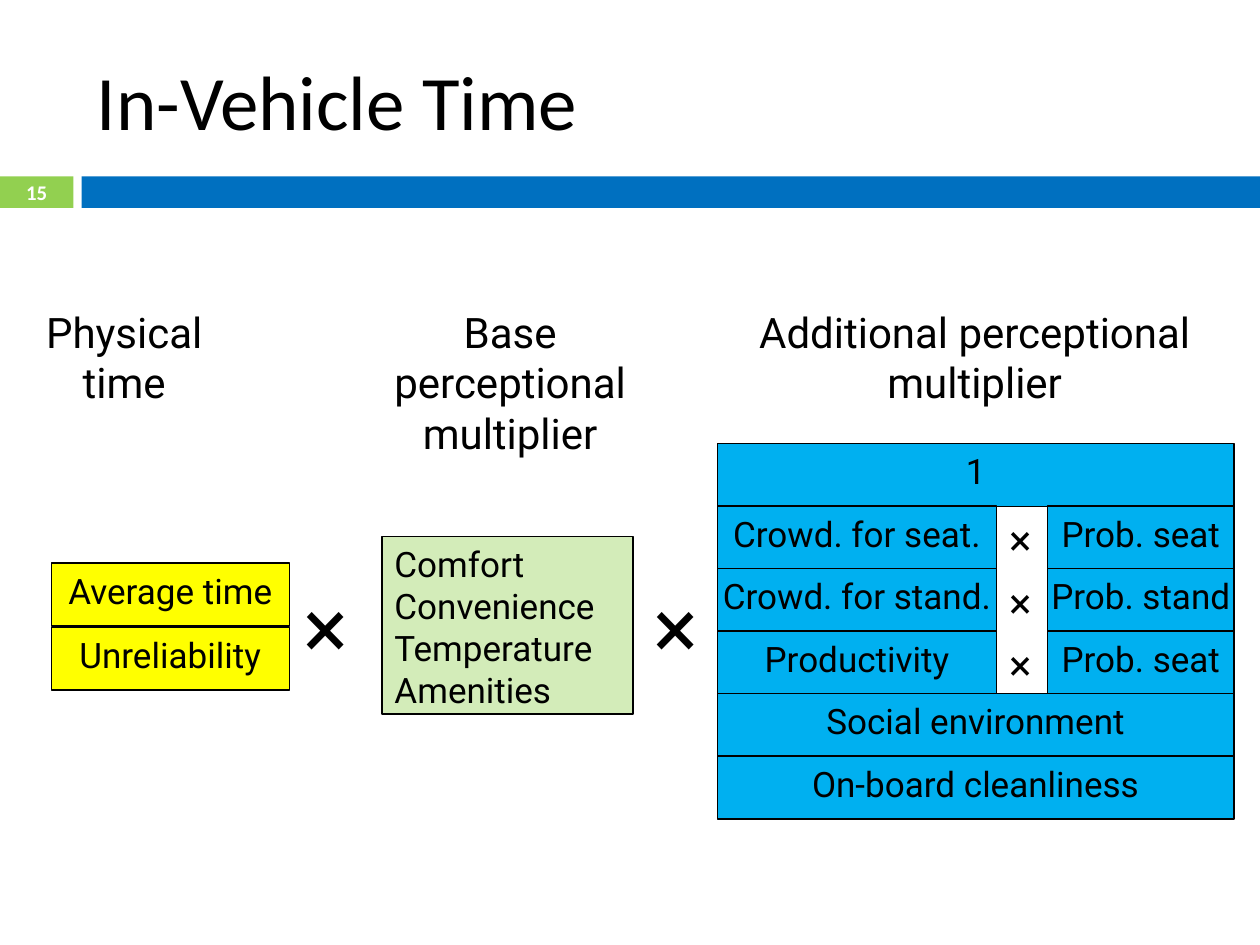
from pptx import Presentation
from pptx.dml.color import RGBColor
from pptx.enum.shapes import MSO_SHAPE
from pptx.enum.text import MSO_ANCHOR, MSO_AUTO_SIZE, PP_ALIGN
from pptx.util import Pt

BLACK, WHITE = "000000", "FFFFFF"
GREEN, BLUE = "92D050", "0070C0"
YELLOW, PALE_GREEN, SKY = "FFFF00", "D3ECB9", "00B0F0"
ROW_HEIGHT = 36


def color(value):
    return RGBColor.from_string(value)


def write(shape, lines, size, font="Roboto", text_color=BLACK, bold=False,
          align=PP_ALIGN.CENTER, anchor=MSO_ANCHOR.TOP, wrap=True):
    frame = shape.text_frame
    frame.auto_size = MSO_AUTO_SIZE.NONE
    frame.word_wrap = wrap
    frame.vertical_anchor = anchor
    for index, line in enumerate(lines):
        paragraph = frame.add_paragraph() if index else frame.paragraphs[0]
        paragraph.alignment = align
        run = paragraph.add_run()
        run.text = line
        run.font.size = Pt(size)
        run.font.name = font
        run.font.bold = bold
        run.font.color.rgb = color(text_color)


def add_rectangle(slide, box, fill, line=None):
    shape = slide.shapes.add_shape(MSO_SHAPE.RECTANGLE, *map(Pt, box))
    shape.shadow.inherit = False
    shape.fill.solid()
    shape.fill.fore_color.rgb = color(fill)
    if line:
        shape.line.color.rgb = color(line)
        shape.line.width = Pt(0.75)
    else:
        shape.line.fill.background()
    return shape


def add_cell(slide, box, fill, text):
    write(add_rectangle(slide, box, fill, BLACK), [text], 20, wrap=False)


def add_label(slide, box, text, size, **style):
    write(slide.shapes.add_textbox(*map(Pt, box)), [text], size, **style)


def add_header(slide, box, title, number):
    left, top, width, height = box
    # Band with the slide number
    bar_top, bar_height, badge_width, bar_left = top + 82.8, 18, 42, 46.6
    add_rectangle(slide, (left, bar_top, badge_width, bar_height), GREEN)
    add_rectangle(slide, (left + bar_left, bar_top, width - bar_left, bar_height), BLUE)
    add_label(slide, (left, bar_top, badge_width, bar_height), number, 11.9,
              font="Calibri", text_color=WHITE, bold=True, anchor=MSO_ANCHOR.MIDDLE)
    # Title
    shape = slide.shapes.title
    shape.left, shape.top = Pt(left + 48.2), Pt(top)
    shape.width, shape.height = Pt(642.2), Pt(77.8)
    write(shape, [title], 44, font="Calibri", align=PP_ALIGN.LEFT,
          anchor=MSO_ANCHOR.MIDDLE)


def add_physical_time(slide, box):
    left, top, width, height = box
    for row, text in enumerate(["Average time", "Unreliability"]):
        add_cell(slide, (left, top + row * (height - ROW_HEIGHT), width, ROW_HEIGHT),
                 YELLOW, text)


def add_base_multiplier(slide, box):
    factors = ["Comfort", "Convenience", "Temperature", "Amenities"]
    write(add_rectangle(slide, box, PALE_GREEN, BLACK), factors, 20,
          align=PP_ALIGN.LEFT)


def add_additional_multiplier(slide, box):
    left, top, width, height = box
    rows = [
        ["1"],
        ["Crowd. for seat.", "Prob. seat"],
        ["Crowd. for stand.", "Prob. stand"],
        ["Productivity", "Prob. seat"],
        ["Social environment"],
        ["On-board cleanliness"],
    ]
    pitch = (height - ROW_HEIGHT) / (len(rows) - 1)
    factor_width, share_width = 159.8, 106.6
    gap = width - factor_width - share_width
    for index, texts in enumerate(rows):
        row_top = top + index * pitch
        if len(texts) == 1:
            add_cell(slide, (left, row_top, width, ROW_HEIGHT), SKY, texts[0])
            continue
        factor, share = texts
        add_cell(slide, (left, row_top, factor_width, ROW_HEIGHT), SKY, factor)
        add_cell(slide, (left + width - share_width, row_top, share_width, ROW_HEIGHT),
                 SKY, share)
        add_label(slide, (left + factor_width - 2, row_top + 1, gap + 2, ROW_HEIGHT),
                  "×", 24, wrap=False)


def main():
    presentation = Presentation()
    presentation.slide_width, presentation.slide_height = Pt(720), Pt(540)
    slide = presentation.slides.add_slide(presentation.slide_layouts[5])
    add_header(slide, (0, 18, 720, 100.8), "In-Vehicle Time", "15")

    # Column headings
    headings = [
        ("Physical time", 13, 116),
        ("Base perceptional multiplier", 198, 187),
        ("Additional perceptional multiplier", 422, 270),
    ]
    for text, left, width in headings:
        add_label(slide, (left, 171.6, width, 92), text, 24)

    # Factors and the signs between them
    add_physical_time(slide, (29.3, 321.8, 136, 72.6))
    add_base_multiplier(slide, (218.3, 306.6, 143.4, 101.4))
    add_additional_multiplier(slide, (409.8, 253.4, 295.4, 214.6))
    for left in (162, 362):
        add_label(slide, (left, 324.7, 48, 65.5), "×", 48, wrap=False)

    presentation.save("out.pptx")


if __name__ == "__main__":
    main()
